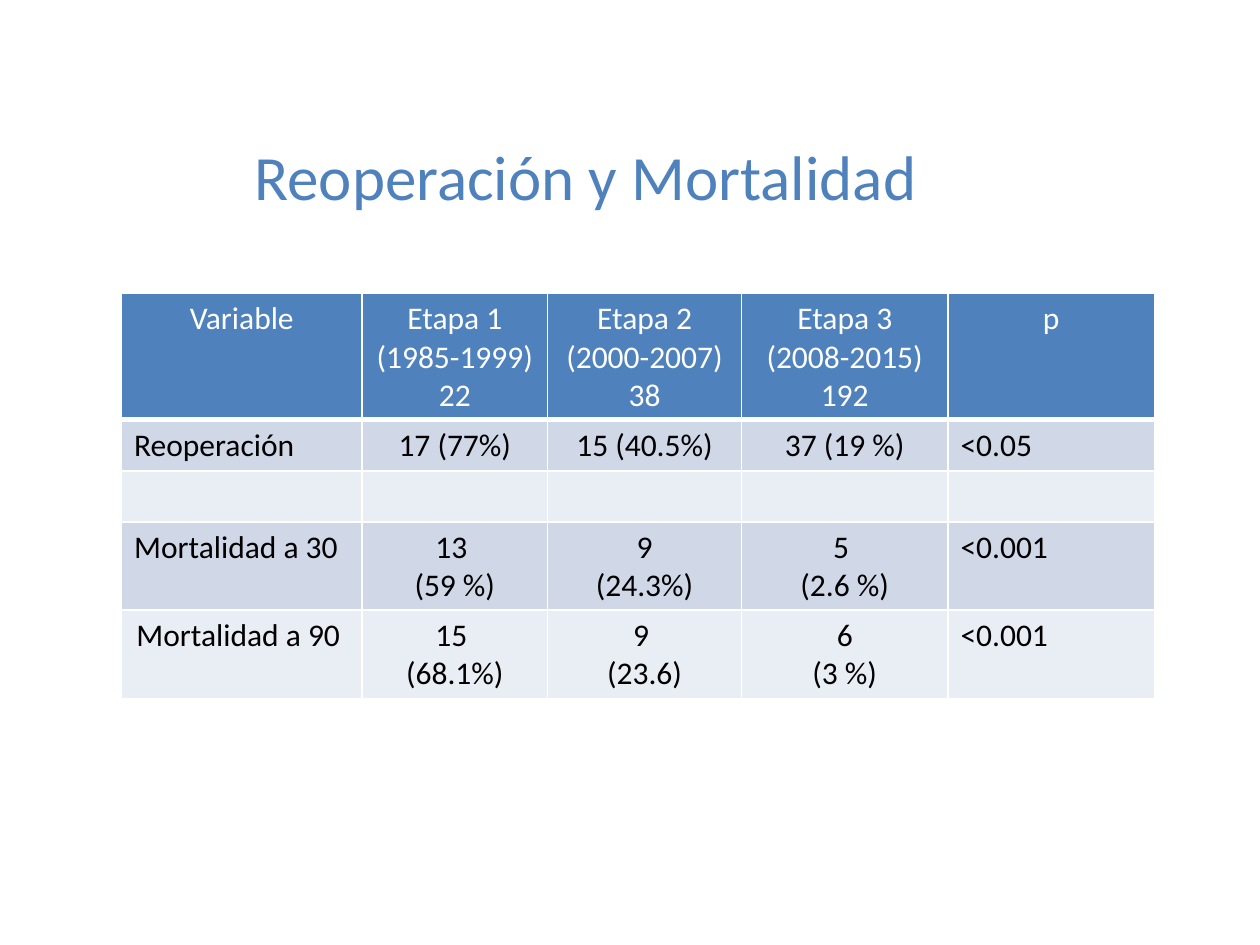
from dataclasses import dataclass

from lxml.etree import SubElement
from pptx import Presentation
from pptx.dml.color import RGBColor
from pptx.enum.text import MSO_AUTO_SIZE, PP_ALIGN
from pptx.oxml.ns import qn
from pptx.table import _Cell
from pptx.text.text import TextFrame
from pptx.util import Cm, Pt

BLUE = "4F81BD"
WHITE = "FFFFFF"
BLACK = "000000"
BAND_FILLS = ("D0D8E8", "E9EDF4")
COLUMN_WIDTHS = (4.85, 3.74, 3.91, 4.16, 4.16)
CENTER, LEFT = PP_ALIGN.CENTER, PP_ALIGN.LEFT


@dataclass(frozen=True)
class TableRow:
    height: float
    texts: tuple[str, ...]
    label_alignment: PP_ALIGN = LEFT


HEADER = TableRow(
    2.54,
    ("Variable", "Etapa 1\n(1985-1999)\n22", "Etapa 2\n(2000-2007)\n38",
     "Etapa 3\n(2008-2015)\n192", "p"),
    CENTER,
)
BODY = (
    TableRow(1.03, ("Reoperación", "17 (77%)", "15 (40.5%)", "37 (19 %)", "<0.05")),
    TableRow(1.03, ("",) * len(COLUMN_WIDTHS)),
    TableRow(1.78, ("Mortalidad a 30", "13 \n(59 %)", " 9 \n(24.3%)",
                    "5 \n(2.6 %)", "<0.001")),
    TableRow(1.78, ("Mortalidad a 90 ", "15 \n(68.1%)", "9 \n(23.6)",
                    "6\n(3 %)", "<0.001"), CENTER),
)


def color(value: str) -> RGBColor:
    return RGBColor.from_string(value)


def write_text(frame: TextFrame, text: str, *, size: float = 18,
               font_color: str = BLACK, alignment: PP_ALIGN = LEFT) -> None:
    """Write one paragraph for each line of the text."""
    frame.text = text
    for paragraph in frame.paragraphs:
        paragraph.alignment = alignment
        paragraph.font.size = Pt(size)
        for run in paragraph.runs:
            run.font.name = "Calibri"
            run.font.size = Pt(size)
            run.font.color.rgb = color(font_color)


def set_borders(cell: _Cell, bottom_width: float) -> None:
    """Draw white borders; they must come before the fill in the XML."""
    properties = cell._tc.get_or_add_tcPr()
    widths = {"a:lnL": 1, "a:lnR": 1, "a:lnT": 1, "a:lnB": bottom_width}
    for tag, width in widths.items():
        line = SubElement(properties, qn(tag), w=str(Pt(width)))
        fill = SubElement(line, qn("a:solidFill"))
        SubElement(fill, qn("a:srgbClr"), val=WHITE)


def fill_row(cells: list[_Cell], row: TableRow, *, fill: str,
             font_color: str, last_alignment: PP_ALIGN, bottom_width: float) -> None:
    middle = [CENTER] * (len(cells) - 2)
    alignments = [row.label_alignment, *middle, last_alignment]
    for cell, text, alignment in zip(cells, row.texts, alignments):
        set_borders(cell, bottom_width)
        cell.fill.solid()
        cell.fill.fore_color.rgb = color(fill)
        write_text(cell.text_frame, text, font_color=font_color, alignment=alignment)


def main() -> None:
    presentation = Presentation()
    presentation.slide_width, presentation.slide_height = Cm(25.4), Cm(19.05)
    slide = presentation.slides.add_slide(presentation.slide_layouts[6])

    # Title
    title = slide.shapes.add_textbox(Cm(4.88), Cm(2.64), Cm(14.4), Cm(1.8))
    title.text_frame.word_wrap = False
    title.text_frame.auto_size = MSO_AUTO_SIZE.SHAPE_TO_FIT_TEXT
    write_text(title.text_frame, "Reoperación y Mortalidad", size=36, font_color=BLUE)

    # Table grid
    rows = (HEADER, *BODY)
    table = slide.shapes.add_table(
        len(rows), len(COLUMN_WIDTHS), Cm(2.45), Cm(5.92),
        Cm(sum(COLUMN_WIDTHS)), Cm(sum(row.height for row in rows)),
    ).table
    for column, width in zip(table.columns, COLUMN_WIDTHS):
        column.width = Cm(width)
    for table_row, row in zip(table.rows, rows):
        table_row.height = Cm(row.height)

    # Header and banded body
    fill_row(list(table.rows[0].cells), HEADER, fill=BLUE, font_color=WHITE,
             last_alignment=CENTER, bottom_width=3)
    for index, row in enumerate(BODY):
        fill_row(list(table.rows[index + 1].cells), row,
                 fill=BAND_FILLS[index % 2], font_color=BLACK,
                 last_alignment=LEFT, bottom_width=1)

    presentation.save("out.pptx")


if __name__ == "__main__":
    main()
